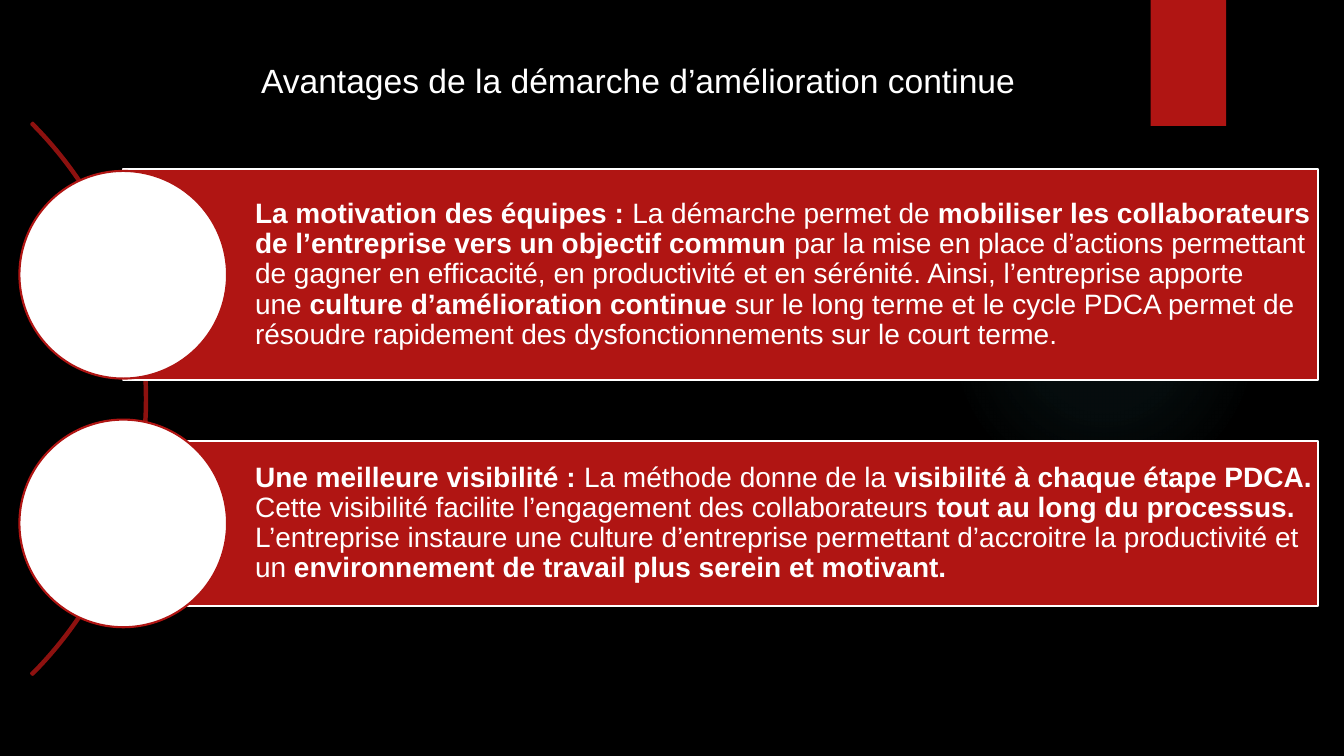
import pptx
import pptx.util
import pptx.dml.color
import pptx.enum.shapes
import pptx.enum.text
import pptx.oxml
import pptx.oxml.ns

KIND = pptx.enum.shapes.MSO_SHAPE
ALIGN = pptx.enum.text.PP_ALIGN
ANCHOR = pptx.enum.text.MSO_ANCHOR
HARD = chr(160)  # no-break space, typed as ~ in the card texts


class Theme:
    back = "000000"
    red = "B01513"
    dark = "8D110F"
    white = "FFFFFF"
    glow = "50B9C1"
    font = "Arial"
    title = 24
    body = 20
    line = 1.5


class Deck:
    """One slide on a grid of square cells, ten to the inch."""

    def __init__(self, theme):
        self.theme = theme
        self.file = pptx.Presentation()
        self.file.slide_width = self.cell(133.33)
        self.file.slide_height = self.cell(75)
        self.slide = self.file.slides.add_slide(self.file.slide_layouts[6])
        fill = self.slide.background.fill
        fill.solid()
        fill.fore_color.rgb = self.color(theme.back)

    def cell(self, count):
        return pptx.util.Inches(count / 10)

    def color(self, code):
        return pptx.dml.color.RGBColor.from_string(code)

    def shape(self, kind, box, fill=None, line=None):
        item = self.slide.shapes.add_shape(kind, *map(self.cell, box))
        item.shadow.inherit = False
        if fill:
            item.fill.solid()
            item.fill.fore_color.rgb = self.color(fill)
        else:
            item.fill.background()
        if line:
            item.line.color.rgb = self.color(line)
            item.line.width = pptx.util.Pt(self.theme.line)
        else:
            item.line.fill.background()
        return item

    def disc(self, x, y, size, fill=None, line=None):
        """Circle given by its centre and diameter."""
        box = (x - size / 2, y - size / 2, size, size)
        return self.shape(KIND.OVAL, box, fill, line)

    def glow(self, x, y, size):
        """Faint round light that fades to its rim."""
        item = self.disc(x, y, size, self.theme.glow)
        stops = "".join(
            f'<a:gs pos="{pos}000"><a:srgbClr val="{self.theme.glow}">'
            f'<a:alpha val="{alpha}000"/></a:srgbClr></a:gs>'
            for pos, alpha in ((0, 7), (36, 6), (69, 0)))
        grad = pptx.oxml.parse_xml(
            f'<a:gradFill {pptx.oxml.ns.nsdecls("a")}><a:gsLst>{stops}</a:gsLst>'
            '<a:path path="circle"><a:fillToRect l="50000" t="50000" '
            'r="50000" b="50000"/></a:path></a:gradFill>')
        solid = item.element.spPr.find(pptx.oxml.ns.qn("a:solidFill"))
        solid.getparent().replace(solid, grad)

    def arc(self, x, y, size):
        """Thin quarter ring, open to the left."""
        box = (x - size / 2, y - size / 2, size, size)
        ring = self.shape(KIND.BLOCK_ARC, box, line=self.theme.dark)
        for i, value in enumerate((189, 27, 0.003)):
            ring.adjustments[i] = value

    def style(self, para, size, align):
        para.alignment = align
        para.font.name = self.theme.font
        para.font.size = pptx.util.Pt(size)
        para.font.color.rgb = self.color(self.theme.white)

    def title(self, box, text):
        item = self.slide.shapes.add_textbox(*map(self.cell, box))
        item.text_frame.word_wrap = True
        para = item.text_frame.paragraphs[0]
        para.text = text
        self.style(para, self.theme.title, ALIGN.CENTER)

    def card(self, mid, high, parts):
        """Red bar with a disc at its left end; parts alternate bold and plain."""
        left = 12.23
        bar = self.shape(KIND.RECTANGLE, (left, mid - high / 2, 118.5, high),
                         self.theme.red, self.theme.white)
        frame = bar.text_frame
        frame.word_wrap = True
        frame.vertical_anchor = ANCHOR.MIDDLE
        frame.margin_left = self.cell(13.07)
        frame.margin_right = self.cell(0.5)
        frame.margin_top = frame.margin_bottom = self.cell(0.6)
        para = frame.paragraphs[0]
        para.line_spacing = 0.9
        self.style(para, self.theme.body, ALIGN.LEFT)
        for i, text in enumerate(parts):
            run = para.add_run()
            run.text = text.replace("~", HARD)
            run.font.bold = i % 2 == 0
        self.disc(left, mid, 20.6, self.theme.white, self.theme.red)


CARDS = (
    (27.26, 20.95, (
        "La motivation des équipes~: ",
        "La démarche permet de~",
        "mobiliser les collaborateurs de l’entreprise vers un objectif commun",
        "~par la mise en place d’actions permettant de gagner en efficacité, "
        "en productivité et en sérénité. Ainsi, l’entreprise apporte une~",
        "culture d’amélioration continue",
        "~sur le long terme et le cycle PDCA permet de résoudre rapidement "
        "des dysfonctionnements sur le court terme.")),
    (51.93, 16.4, (
        "Une meilleure visibilité~: ",
        "La méthode donne de la~",
        "visibilité à chaque étape PDCA. ",
        "Cette visibilité facilite l’engagement des collaborateurs ",
        "tout au long du processus.",
        " L’entreprise instaure une culture d’entreprise permettant "
        "d’accroitre la productivité et un",
        "~environnement de travail plus serein et motivant.")),
)


def main():
    deck = Deck(Theme)
    deck.glow(109.5, 33.7, 30.8)
    deck.shape(KIND.RECTANGLE, (114.15, 0, 7.5, 12.5), Theme.red)
    deck.title((0, 5.5, 126.6, 5), "Avantages de la démarche d’amélioration continue")
    deck.arc(-24.15, 39.57, 77.5)
    for mid, high, parts in CARDS:
        deck.card(mid, high, parts)
    deck.file.save("out.pptx")


if __name__ == "__main__":
    main()
